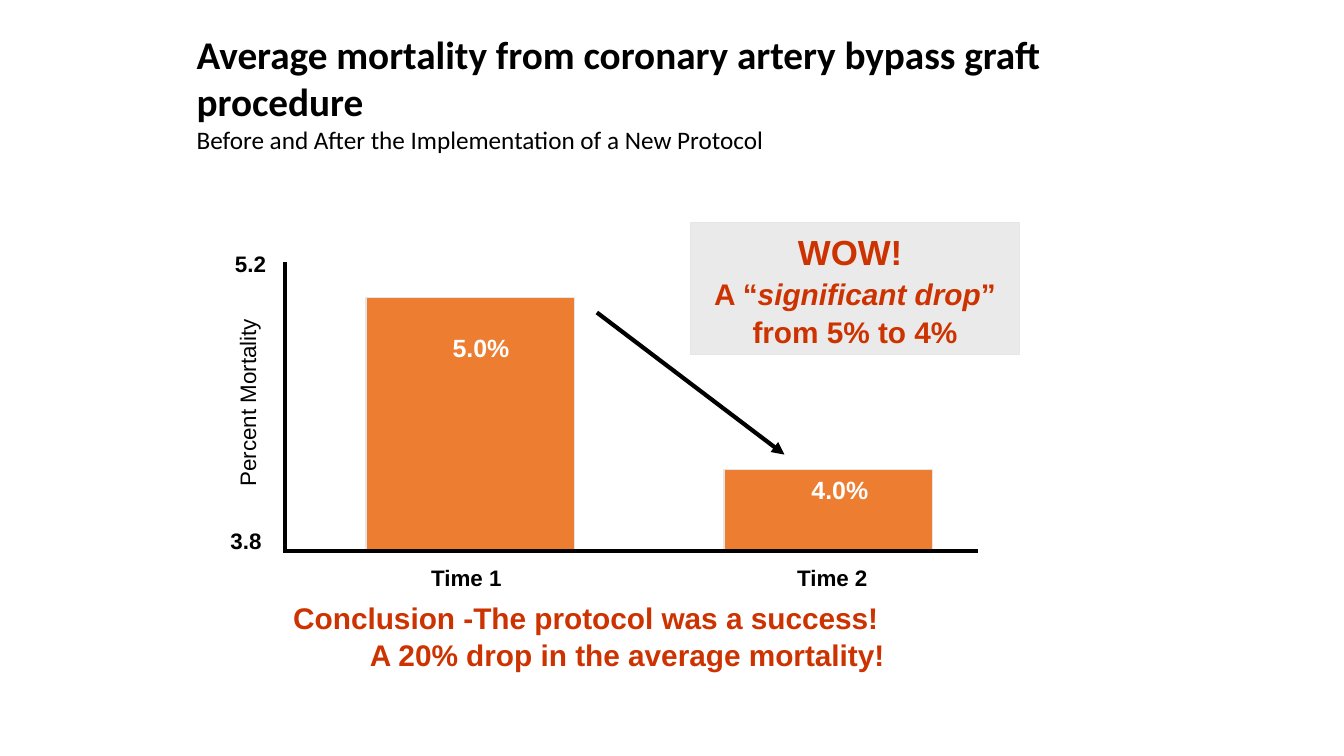
"""Build a slide comparing average bypass mortality before and after a protocol."""
from dataclasses import dataclass

from lxml import etree
from pptx import Presentation
from pptx.dml.color import RGBColor
from pptx.enum.shapes import MSO_CONNECTOR, MSO_SHAPE
from pptx.enum.text import MSO_ANCHOR, MSO_AUTO_SIZE, PP_ALIGN
from pptx.oxml.ns import qn
from pptx.shapes.autoshape import Shape
from pptx.slide import Slide
from pptx.text.text import _Paragraph
from pptx.util import Emu, Pt

STRAIGHT = MSO_CONNECTOR.STRAIGHT
RECTANGLE = MSO_SHAPE.RECTANGLE
TOP, MIDDLE = MSO_ANCHOR.TOP, MSO_ANCHOR.MIDDLE
NO_AUTOFIT = MSO_AUTO_SIZE.NONE
LEFT, CENTER = PP_ALIGN.LEFT, PP_ALIGN.CENTER

EMU_PER_PX = 9144
BASELINE = 547
BAR_WIDTH = 207
COLORS = {
    "black": "000000",
    "white": "FFFFFF",
    "bar": "ED7D31",
    "outline": "E7E6E6",
    "callout": "EAEAEA",
    "alert": "CC3300",
}


@dataclass(frozen=True)
class Box:
    left: int
    top: int
    width: int
    height: int


@dataclass(frozen=True)
class Label:
    text: str
    box: Box
    size: float = 16
    color: str = "black"
    bold: bool = True
    rotation: int = 0


@dataclass(frozen=True)
class Line:
    start: tuple[int, int]
    end: tuple[int, int]
    arrow: bool = False


BARS = (Box(363, 295, BAR_WIDTH, BASELINE - 295), Box(718, 466, BAR_WIDTH, BASELINE - 466))
LINES = (
    Line((283, 260), (283, 548)),
    Line((281, BASELINE), (970, BASELINE)),
    Line((592, 310), (778, 451), arrow=True),
)
LABELS = (
    Label("Percent Mortality", Box(112, 381, 267, 37), bold=False, rotation=270),
    Label("Time 1", Box(407, 555, 111, 37)),
    Label("Time 2", Box(770, 555, 111, 37)),
    Label("3.8", Box(207, 518, 74, 37)),
    Label("5.2", Box(215, 243, 67, 37)),
    Label("5.0%", Box(429, 325, 96, 40), 17.8, "white"),
    Label("4.0%", Box(785, 466, 96, 40), 17.8, "white"),
)


def px(value: int) -> Emu:
    return Emu(value * EMU_PER_PX)


def rgb(name: str) -> RGBColor:
    return RGBColor.from_string(COLORS[name])


def place(box: Box) -> tuple[Emu, Emu, Emu, Emu]:
    return px(box.left), px(box.top), px(box.width), px(box.height)


def style(paragraph: _Paragraph, size: float, color: str, bold: bool = True,
          alignment: PP_ALIGN = CENTER) -> None:
    paragraph.alignment = alignment
    paragraph.font.name = "Arial"
    paragraph.font.size = Pt(size)
    paragraph.font.bold = bold
    paragraph.font.color.rgb = rgb(color)


def add_title(slide: Slide) -> None:
    title = slide.shapes.title
    title.left, title.top, title.width, title.height = place(Box(185, 24, 888, 135))
    frame = title.text_frame
    frame.word_wrap = True
    frame.auto_size = NO_AUTOFIT
    frame.vertical_anchor = MIDDLE
    paragraph = frame.paragraphs[0]
    paragraph.alignment = LEFT
    paragraph.font.name = "Calibri"
    paragraph.font.color.rgb = rgb("black")
    heading = paragraph.add_run()
    heading.text = "Average mortality from coronary artery bypass graft procedure"
    heading.font.size, heading.font.bold = Pt(28), True
    paragraph.add_line_break()
    subtitle = paragraph.add_run()
    subtitle.text = "Before and After the Implementation of a New Protocol"
    subtitle.font.size, subtitle.font.bold = Pt(18), False


def add_rectangle(slide: Slide, box: Box, fill: str) -> Shape:
    shape = slide.shapes.add_shape(RECTANGLE, *place(box))
    shape.shadow.inherit = False
    shape.fill.solid()
    shape.fill.fore_color.rgb = rgb(fill)
    shape.line.color.rgb = rgb("outline")
    shape.line.width = Pt(1)
    return shape


def add_text_box(slide: Slide, box: Box) -> Shape:
    shape = slide.shapes.add_textbox(*place(box))
    shape.text_frame.word_wrap = True
    shape.text_frame.vertical_anchor = TOP
    return shape


def add_label(slide: Slide, label: Label) -> None:
    shape = add_text_box(slide, label.box)
    shape.rotation = label.rotation
    paragraph = shape.text_frame.paragraphs[0]
    paragraph.text = label.text
    style(paragraph, label.size, label.color, label.bold)


def add_line(slide: Slide, line: Line) -> None:
    connector = slide.shapes.add_connector(
        STRAIGHT, *map(px, line.start), *map(px, line.end))
    connector.line.color.rgb = rgb("black")
    connector.line.width = Pt(3)
    if line.arrow:
        outline = connector.line._get_or_add_ln()
        etree.SubElement(outline, qn("a:tailEnd"), type="triangle")
    etree.SubElement(connector._element.spPr, qn("a:effectLst"))


def add_callout(slide: Slide) -> None:
    frame = add_rectangle(slide, Box(685, 221, 326, 131), "callout").text_frame
    frame.word_wrap = True
    frame.vertical_anchor = MIDDLE
    exclamation = frame.paragraphs[0]
    exclamation.text = "WOW! "
    style(exclamation, 24.9, "alert")
    for parts in (("A “", "significant drop", "”"), ("from 5% to 4%",)):
        paragraph = frame.add_paragraph()
        style(paragraph, 21.3, "alert")
        paragraph.line_spacing = 0.6
        paragraph.space_before = Pt(11.6)
        for part in parts:
            run = paragraph.add_run()
            run.text = part
            run.font.italic = part == "significant drop"


def add_conclusion(slide: Slide) -> None:
    frame = add_text_box(slide, Box(281, 590, 678, 82)).text_frame
    first, second = frame.paragraphs[0], frame.add_paragraph()
    first.text = "Conclusion -The protocol was a success!"
    second.text = "A 20% drop in the average mortality!"
    for paragraph in (first, second):
        style(paragraph, 21.3, "alert", alignment=LEFT)
    second._p.get_or_add_pPr().set("marL", str(px(76)))
    second.space_before = Pt(1)


def main() -> None:
    presentation = Presentation()
    presentation.slide_width, presentation.slide_height = px(1333), px(750)
    slide = presentation.slides.add_slide(presentation.slide_layouts[5])
    add_title(slide)
    for bar in BARS:
        add_rectangle(slide, bar, "bar")
    for label in LABELS:
        add_label(slide, label)
    add_callout(slide)
    for line in LINES:
        add_line(slide, line)
    add_conclusion(slide)
    presentation.save("out.pptx")


if __name__ == "__main__":
    main()
